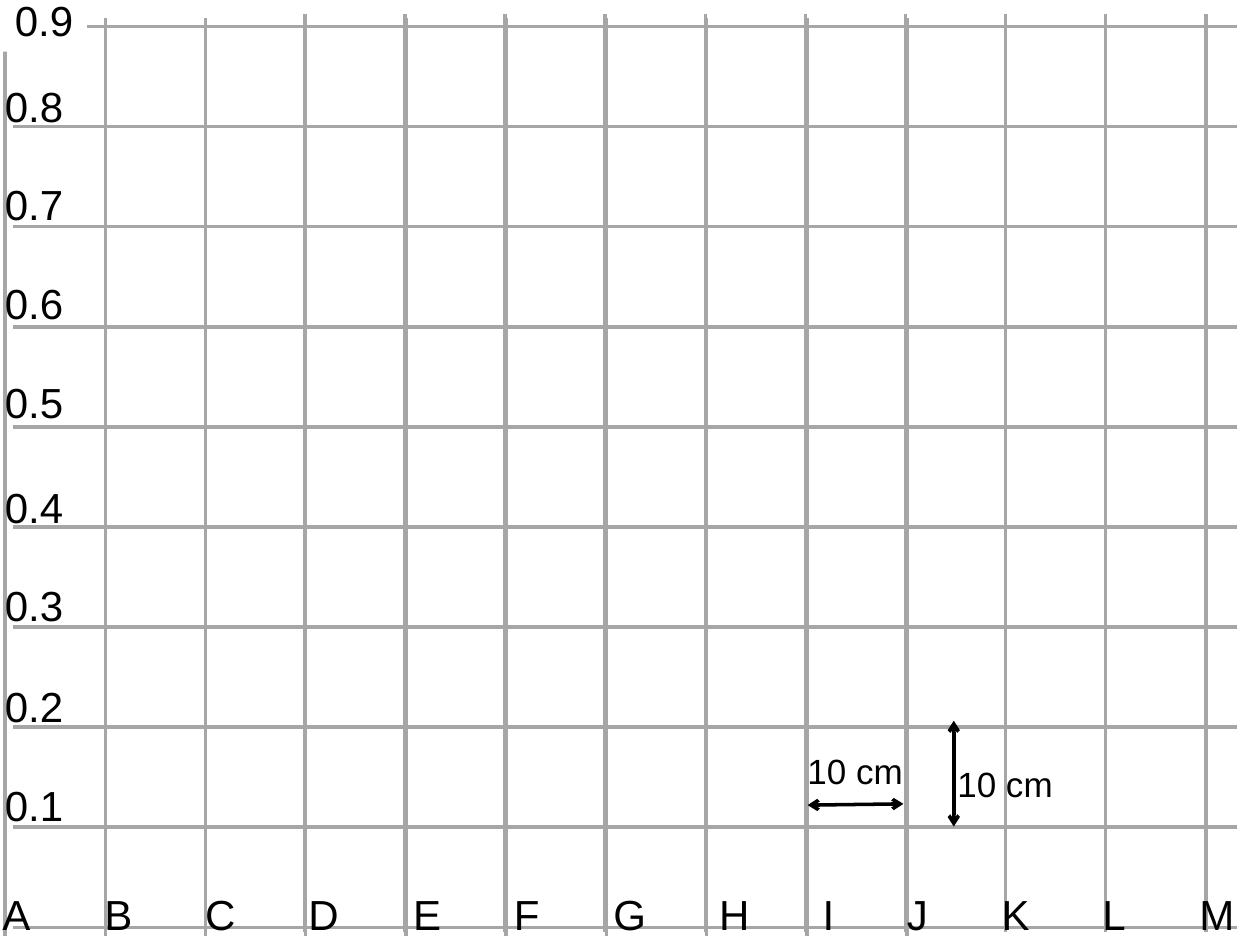
"""Builds a blank measuring grid with lettered columns and heights in tenths."""
from lxml import etree
from pptx import Presentation, util as u
from pptx.dml.color import RGBColor
from pptx.enum import shapes, text
from pptx.oxml import ns

COLORS = {"grid": "A6A6A6", "ink": "000000", "paper": "FFFFFF"}
FONT = "Arial"

COLUMN_LABELS = [
    ("A", -0.08, 0.42), ("B", 0.73, 0.42), ("C", 1.53, 0.44), ("D", 2.35, 0.44),
    ("E", 3.18, 0.42), ("F", 3.98, 0.40), ("G", 4.77, 0.46), ("H", 5.61, 0.44),
    ("I", 6.43, 0.29), ("J", 7.10, 0.37), ("K", 7.85, 0.42), ("L", 8.65, 0.39),
    ("M", 9.42, 0.48),
]
HEIGHT_LABELS = [
    ("0.1", 6.14), ("0.2", 5.35), ("0.3", 4.55), ("0.4", 3.77),
    ("0.5", 2.94), ("0.6", 2.15), ("0.7", 1.37), ("0.8", 0.59),
]


def evenly(first, last, count=10):
    """Return equally spaced positions from first to last."""
    return [first + (last - first) * i / (count - 1) for i in range(count)]


class GridSlide:
    """Holds the style and the current slide."""

    def __init__(self, slide):
        """Keep the slide to draw on."""
        self.slide = slide

    def line(self, start, end, color="grid", arrows=False):
        """Draw a straight line, with an open arrowhead at both ends if asked."""
        ends = [u.Inches(value) for value in (*start, *end)]
        rule = self.slide.shapes.add_connector(shapes.MSO_CONNECTOR.STRAIGHT, *ends)
        rule.line.color.rgb = RGBColor.from_string(COLORS[color])
        rule.line.width = u.Pt(2)
        properties = rule.element.spPr
        if arrows:
            stroke = properties.find(ns.qn("a:ln"))
            for tag in ("a:headEnd", "a:tailEnd"):
                etree.SubElement(stroke, ns.qn(tag), type="arrow")
        etree.SubElement(properties, ns.qn("a:effectLst"))

    def fill_text(self, frame, wording, size):
        """Put one left-aligned line of wording in a text frame."""
        frame.text = wording
        frame.word_wrap = False
        frame.auto_size = text.MSO_AUTO_SIZE.SHAPE_TO_FIT_TEXT
        frame.vertical_anchor = text.MSO_ANCHOR.TOP
        paragraph = frame.paragraphs[0]
        paragraph.alignment = text.PP_ALIGN.LEFT
        font = paragraph.runs[0].font
        font.name, font.size = FONT, u.Pt(size)
        font.color.rgb = RGBColor.from_string(COLORS["ink"])

    def label(self, wording, left, top, width, height=0.5, size=24):
        """Add a see-through text label."""
        box = [u.Inches(value) for value in (left, top, width, height)]
        self.fill_text(self.slide.shapes.add_textbox(*box).text_frame, wording, size)

    def masked_label(self, wording, left, top, width, height=0.5, size=24):
        """Add a label that hides the grid behind it."""
        box = [u.Inches(value) for value in (left, top, width, height)]
        mask = self.slide.shapes.add_shape(shapes.MSO_SHAPE.RECTANGLE, *box)
        mask.shadow.inherit = False
        mask.fill.solid()
        mask.fill.fore_color.rgb = RGBColor.from_string(COLORS["paper"])
        mask.line.fill.background()
        self.fill_text(mask.text_frame, wording, size)


def main():
    """Build and save the slide."""
    deck = Presentation()
    deck.slide_width, deck.slide_height = u.Inches(10), u.Inches(7.5)
    grid = GridSlide(deck.slides.add_slide(deck.slide_layouts[6]))

    for x in evenly(0.04, 7.2):
        grid.line((x, 7.43), (x, 0.14))
    for y in evenly(0.21, 7.36):
        grid.line((0.1, y), (9.82, y))
    for x in evenly(2.42, 9.57):
        grid.line((x, 7.4), (x, 0.11))

    for height, top in HEIGHT_LABELS:
        grid.label(height, -0.06, top, 0.67)
    grid.masked_label("0.9", 0.02, -0.09, 0.67)
    for letter, left, width in COLUMN_LABELS:
        grid.label(letter, left, 7, width)

    for left, top in ((6.31, 5.9), (7.5, 6)):
        grid.label("10 cm", left, top, 0.96, 0.43, 20)
    grid.line((6.41, 6.39), (7.17, 6.38), "ink", arrows=True)
    grid.line((7.57, 5.72), (7.57, 6.56), "ink", arrows=True)

    deck.save("out.pptx")


if __name__ == "__main__":
    main()
